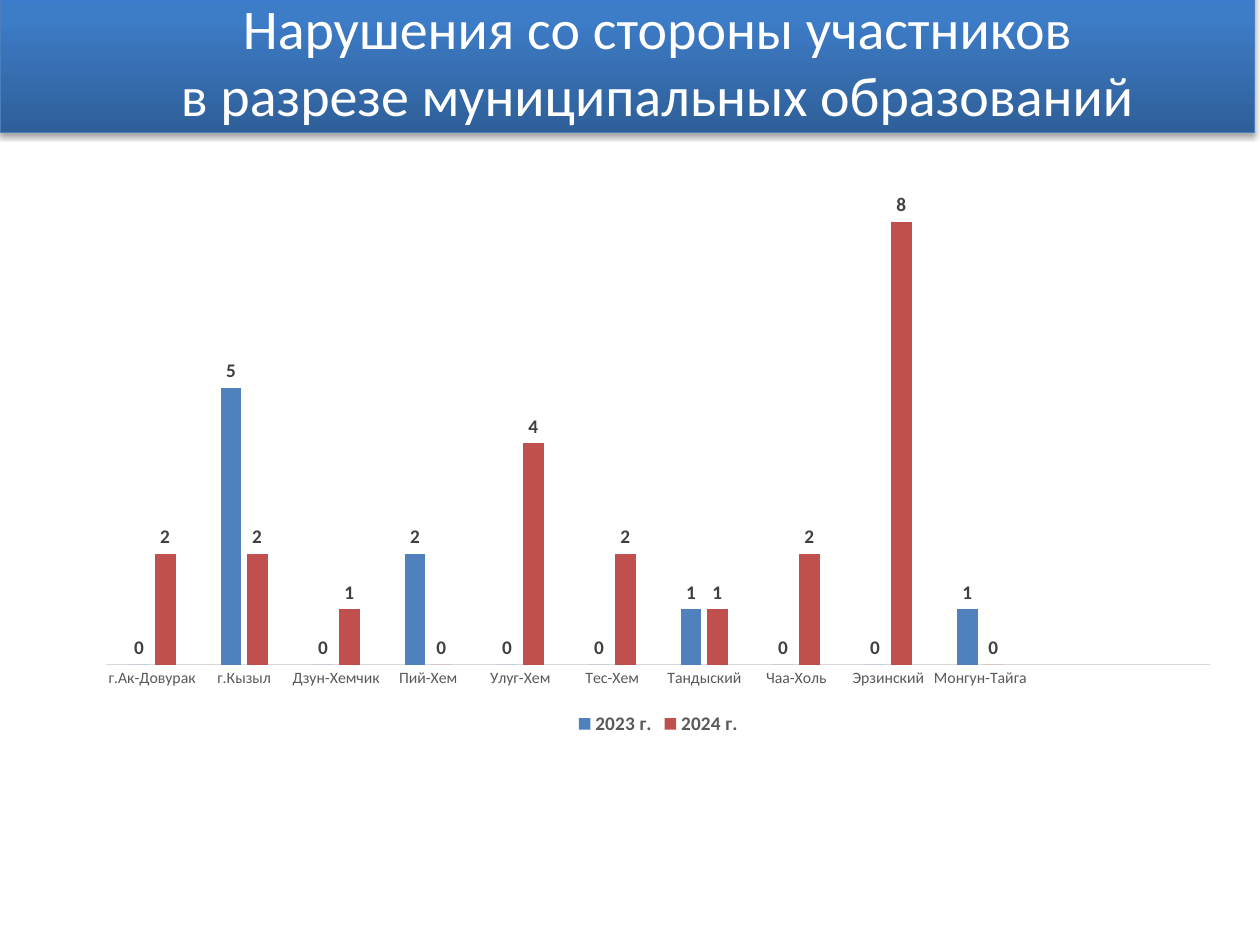
from copy import deepcopy

from pptx import Presentation
from pptx.chart.data import CategoryChartData
from pptx.dml.color import RGBColor
from pptx.enum.chart import (XL_CHART_TYPE, XL_LABEL_POSITION as LabelPos,
                             XL_LEGEND_POSITION as LegendPos, XL_TICK_MARK as TickMark)
from pptx.enum.shapes import MSO_SHAPE as Shape
from pptx.enum.text import MSO_ANCHOR as Anchor, PP_ALIGN as Align
from pptx.oxml import parse_xml
from pptx.oxml.ns import nsdecls, qn
from pptx.util import Inches, Pt

TITLE = ["Нарушения со стороны участников", "в разрезе муниципальных образований"]
DISTRICTS = ["г.Ак-Довурак", "г.Кызыл", "Дзун-Хемчик", "Пий-Хем", "Улуг-Хем", "Тес-Хем",
             "Тандыский", "Чаа-Холь", "Эрзинский", "Монгун-Тайга", "", ""]
YEARS = [
    ("2023 г.", "4F81BD", [0, 5, 0, 2, 0, 0, 1, 0, 0, 1, None, None]),
    ("2024 г.", "C0504D", [2, 2, 1, 0, 4, 2, 1, 2, 8, 0, None, None]),
]
BANNER_STOPS = [(0, "2F5F99"), (0.8, "3D7CC7"), (1, "3A7CCB")]


def rgb(value):
    return RGBColor.from_string(value)


def set_font(font, size, color, bold=False):
    font.name = "Calibri"
    font.size = Pt(size)
    font.bold = bold
    font.color.rgb = rgb(color)


def write_lines(frame, lines, size, color, align=Align.CENTER):
    for index, line in enumerate(lines):
        paragraph = frame.paragraphs[0] if index == 0 else frame.add_paragraph()
        paragraph.alignment = align
        run = paragraph.add_run()
        run.text = line
        set_font(run.font, size, color)


def fill_gradient(shape, stops, angle):
    shape.fill.gradient()
    shape.fill.gradient_angle = angle
    stop_list = shape.fill._xPr.find(qn("a:gradFill")).find(qn("a:gsLst"))
    while len(stop_list) < len(stops):
        stop_list.append(deepcopy(stop_list[-1]))
    for stop, (position, color) in zip(shape.fill.gradient_stops, stops):
        stop.position = position
        stop.color.rgb = rgb(color)


def add_soft_shadow(shape):
    shape.shadow.inherit = False
    shape._element.spPr.find(qn("a:effectLst")).append(parse_xml(
        f'<a:outerShdw {nsdecls("a")} blurRad="{Pt(3.1)}" dist="{Pt(1.8)}" dir="5400000" '
        'rotWithShape="0"><a:srgbClr val="000000"><a:alpha val="35000"/></a:srgbClr>'
        '</a:outerShdw>'))


def add_banner(slide, left, top, width, height):
    banner = slide.shapes.add_shape(Shape.RECTANGLE, left, top, width, height)
    fill_gradient(banner, BANNER_STOPS, 90)
    banner.line.color.rgb = rgb("4B7EBC")
    banner.line.width = Pt(0.75)
    add_soft_shadow(banner)
    frame = banner.text_frame
    frame.word_wrap = True
    frame.vertical_anchor = Anchor.MIDDLE
    frame.margin_left = Inches(0.58)
    write_lines(frame, TITLE, 32, "FFFFFF")


def set_plot_layout(chart, **fractions):
    """Fix the inner plot area as fractions x, y, w, h of the chart."""
    plot_area = chart._chartSpace.chart.plotArea
    for old in plot_area.findall(qn("c:layout")):
        plot_area.remove(old)
    sizes = "".join(f'<c:{key} val="{value}"/>' for key, value in fractions.items())
    plot_area.insert(0, parse_xml(
        f'<c:layout {nsdecls("c")}><c:manualLayout><c:layoutTarget val="inner"/>'
        f'<c:xMode val="edge"/><c:yMode val="edge"/>{sizes}</c:manualLayout></c:layout>'))


def style_axes(chart):
    districts = chart.category_axis
    districts.major_tick_mark = districts.minor_tick_mark = TickMark.NONE
    districts.has_major_gridlines = False
    districts.format.line.color.rgb = rgb("D9D9D9")
    districts.format.line.width = Pt(0.75)
    set_font(districts.tick_labels.font, 9, "595959")
    counts = chart.value_axis
    counts.visible = False
    counts.has_major_gridlines = False
    counts.minimum_scale, counts.maximum_scale = 0, 9


def add_violations_chart(slide, left, top, width, height):
    data = CategoryChartData()
    data.categories = DISTRICTS
    for year, _, counts in YEARS:
        data.add_series(year, counts)
    chart = slide.shapes.add_chart(XL_CHART_TYPE.COLUMN_CLUSTERED, left, top,
                                   width, height, data).chart
    set_font(chart.font, 10, "000000")
    chart.has_title = False
    style_axes(chart)
    set_plot_layout(chart, x=0.02, y=0.02, w=0.96, h=0.85)

    plot = chart.plots[0]
    plot.gap_width, plot.overlap = 219, -27
    plot.vary_by_categories = False
    for series, (_, color, _) in zip(plot.series, YEARS):
        series.format.fill.solid()
        series.format.fill.fore_color.rgb = rgb(color)
        labels = series.data_labels
        labels.show_value = True
        labels.position = LabelPos.OUTSIDE_END
        set_font(labels.font, 11, "404040", bold=True)

    chart.has_legend = True
    chart.legend.position = LegendPos.BOTTOM
    chart.legend.include_in_layout = False
    set_font(chart.legend.font, 11, "595959", bold=True)


def main():
    deck = Presentation()
    deck.slide_width, deck.slide_height = Inches(10), Inches(7.5)
    slide = deck.slides.add_slide(deck.slide_layouts[6])
    add_banner(slide, Inches(0), Inches(-0.09), Inches(9.96), Inches(1.14))
    add_violations_chart(slide, Inches(0.66), Inches(1.23), Inches(9.13), Inches(4.65))
    deck.save("out.pptx")


if __name__ == "__main__":
    main()
